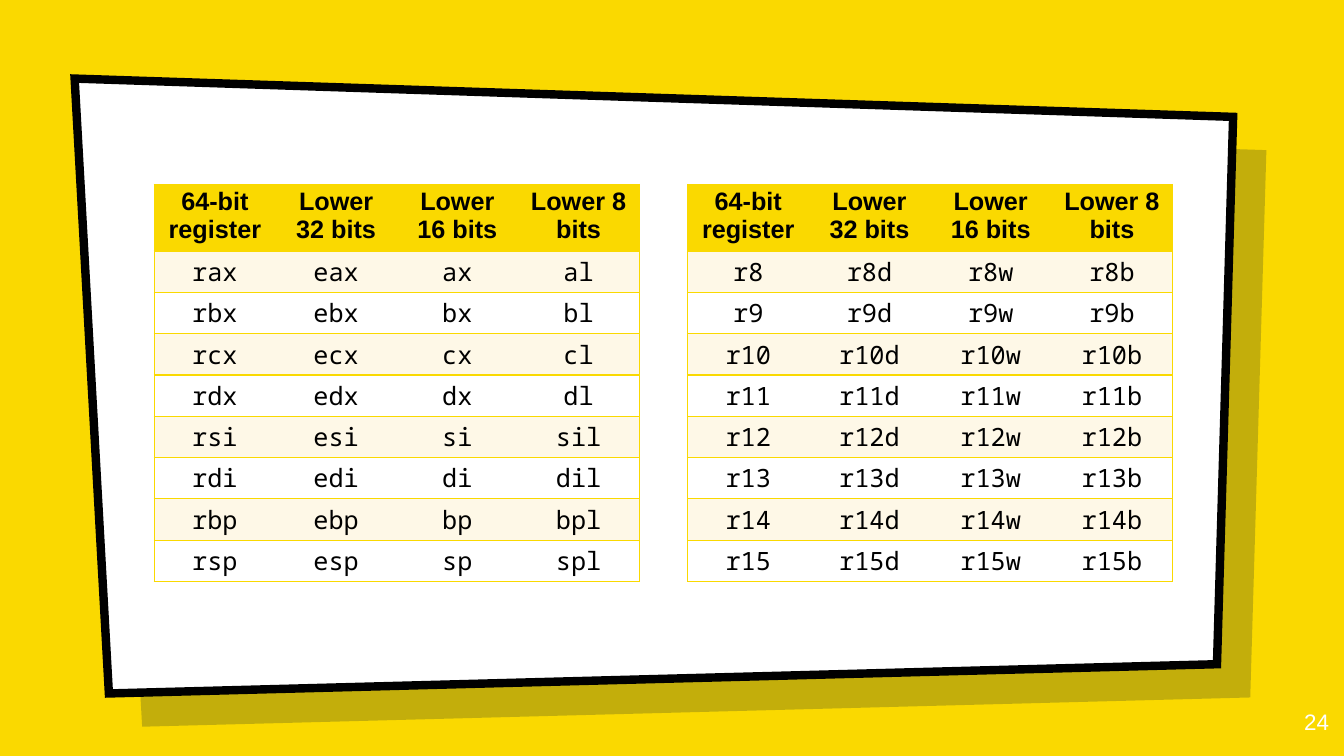
from lxml.etree import SubElement
from pptx import Presentation
from pptx.dml.color import RGBColor
from pptx.enum.text import MSO_ANCHOR, PP_ALIGN
from pptx.oxml.ns import qn
from pptx.util import Inches, Pt

# Content
HEADERS = ["64-bit register", "Lower 32 bits", "Lower 16 bits", "Lower 8 bits"]
NAMED_REGISTERS = [
    ("rax", "eax", "ax", "al"),
    ("rbx", "ebx", "bx", "bl"),
    ("rcx", "ecx", "cx", "cl"),
    ("rdx", "edx", "dx", "dl"),
    ("rsi", "esi", "si", "sil"),
    ("rdi", "edi", "di", "dil"),
    ("rbp", "ebp", "bp", "bpl"),
    ("rsp", "esp", "sp", "spl"),
]
NUMBERED_REGISTERS = [
    tuple(f"r{n}{suffix}" for suffix in ("", "d", "w", "b")) for n in range(8, 16)
]
PAGE_NUMBER = "24"

# Style and layout, in inches
COLORS = {"yellow": "FAD900", "cream": "FEF8E7", "white": "FFFFFF",
          "black": "000000", "navy": "001936"}
HEADER_FONT, CODE_FONT = "Arial", "Noto Sans Mono"
PANEL = [(0.74, 0.78), (12.23, 1.16), (12.07, 6.59), (1.08, 6.88)]
SHADOW_OFFSET = 0.33
TABLES = [(1.53, NAMED_REGISTERS), (6.82, NUMBERED_REGISTERS)]
TABLE_TOP, TABLE_WIDTH = 1.83, 4.81
HEADER_HEIGHT, ROW_HEIGHT = 0.63, 0.41


def rgb(name):
    return RGBColor.from_string(COLORS[name])


def add_panel(slide, offset, color):
    points = [(Inches(x + offset), Inches(y + offset)) for x, y in PANEL]
    builder = slide.shapes.build_freeform(*points[0])
    builder.add_line_segments(points[1:], close=True)
    sp = builder.convert_to_shape()
    sp.shadow.inherit = False
    sp.fill.solid()
    sp.fill.fore_color.rgb = rgb(color)
    return sp


def style_text(p, align, font, size, color, bold=False):
    p.alignment = align
    r = p.runs[0]
    r.font.name, r.font.size, r.font.bold = font, Pt(size), bold
    r.font.color.rgb = rgb(color)


def set_borders(cell, sides):
    """Draw yellow lines on the given sides and hide the others."""
    tc_pr = cell._tc.get_or_add_tcPr()
    for i, side in enumerate("LRTB"):
        ln = tc_pr.makeelement(qn(f"a:ln{side}"), {"w": str(Pt(1))})
        if side in sides:
            fill = SubElement(ln, qn("a:solidFill"))
            SubElement(fill, qn("a:srgbClr"), val=COLORS["yellow"])
        else:
            SubElement(ln, qn("a:noFill"))
        tc_pr.insert(i, ln)


def add_register_table(slide, left, registers):
    rows = [HEADERS, *registers]
    height = HEADER_HEIGHT + ROW_HEIGHT * len(registers)
    table = slide.shapes.add_table(
        len(rows), len(HEADERS), Inches(left), Inches(TABLE_TOP),
        Inches(TABLE_WIDTH), Inches(height)).table
    table.first_row = table.horz_banding = False
    last = len(HEADERS) - 1
    for i, row in enumerate(rows):
        header = i == 0
        table.rows[i].height = Inches(HEADER_HEIGHT if header else ROW_HEIGHT)
        band = "yellow" if header else "cream" if i % 2 else "white"
        for j, text in enumerate(row):
            cell = table.cell(i, j)
            cell.text_frame.text = text
            cell.margin_left = cell.margin_right = Inches(0.07)
            cell.margin_top = cell.margin_bottom = Inches(0.03)
            cell.vertical_anchor = MSO_ANCHOR.TOP if header else MSO_ANCHOR.MIDDLE
            cell.fill.solid()
            cell.fill.fore_color.rgb = rgb(band)
            style_text(cell.text_frame.paragraphs[0], PP_ALIGN.CENTER,
                       HEADER_FONT if header else CODE_FONT, 18, "black", header)
            set_borders(cell, "TB" + ("L" if j == 0 else "R" if j == last else ""))


def main():
    prs = Presentation()
    prs.slide_width, prs.slide_height = Inches(13.33), Inches(7.5)
    s = prs.slides.add_slide(prs.slide_layouts[6])
    s.background.fill.solid()
    s.background.fill.fore_color.rgb = rgb("yellow")

    # Slanted panel over its translucent shadow
    shade = add_panel(s, SHADOW_OFFSET, "navy")
    shade.line.fill.background()
    color = shade.fill._xPr.find(qn("a:solidFill"))[0]
    SubElement(color, qn("a:alpha"), val="22000")
    panel = add_panel(s, 0, "white")
    panel.line.color.rgb = rgb("black")
    panel.line.width = Pt(6)
    SubElement(panel.line._get_or_add_ln(), qn("a:miter"), lim="800000")

    # Page number
    box = s.shapes.add_textbox(Inches(12.48), Inches(6.93), Inches(0.8), Inches(0.57))
    tf = box.text_frame
    tf.word_wrap = True
    tf.margin_left = tf.margin_right = tf.margin_top = tf.margin_bottom = Inches(0.1)
    tf.text = PAGE_NUMBER
    style_text(tf.paragraphs[0], PP_ALIGN.RIGHT, HEADER_FONT, 16, "white")

    # Register tables
    for left, registers in TABLES:
        add_register_table(s, left, registers)

    prs.save("out.pptx")


if __name__ == "__main__":
    main()
